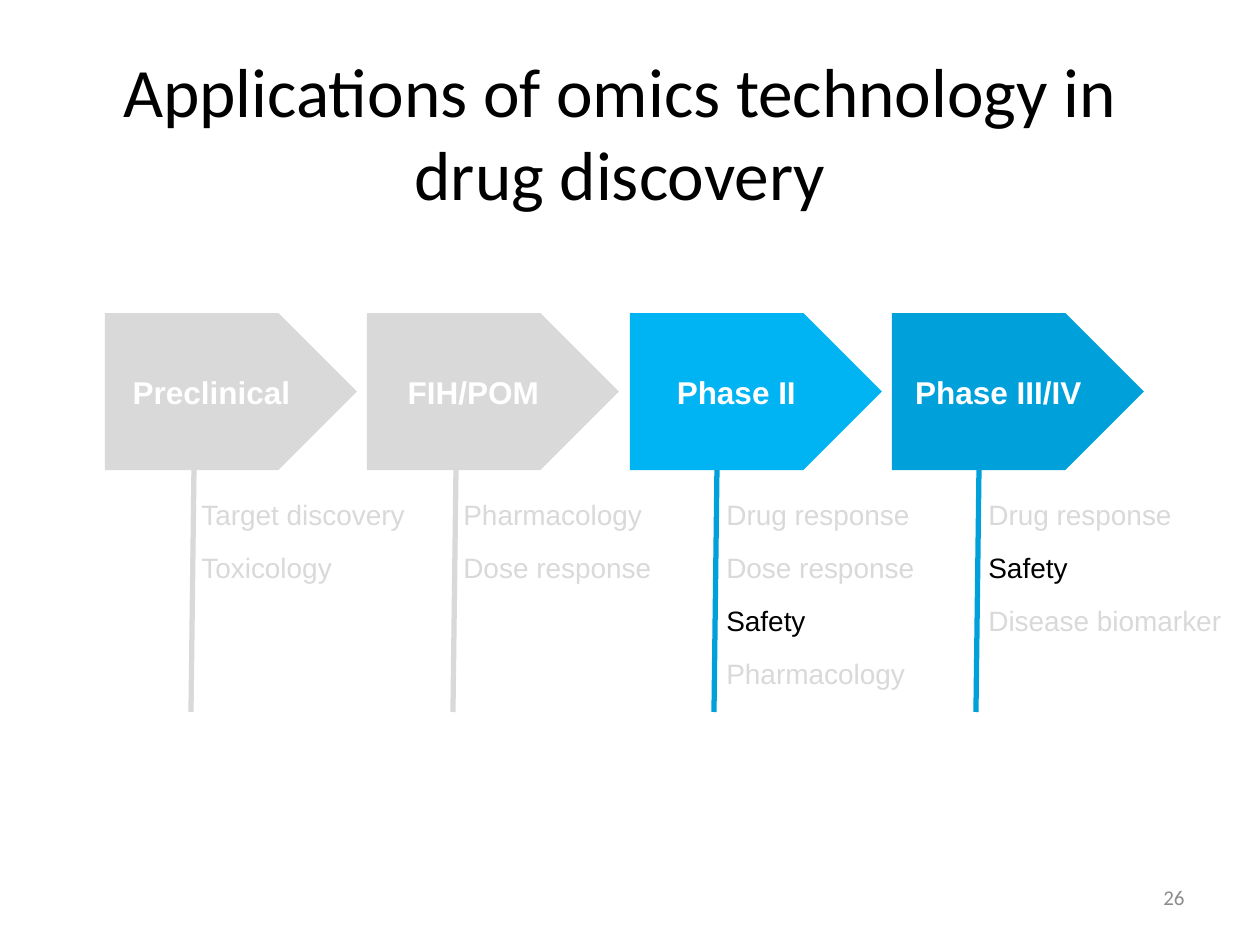
from pptx import Presentation
from pptx.dml.color import RGBColor
from pptx.enum.shapes import MSO_CONNECTOR, MSO_SHAPE
from pptx.enum.text import MSO_ANCHOR, MSO_AUTO_SIZE, PP_ALIGN
from pptx.oxml.ns import qn
from pptx.util import Pt
from lxml.etree import SubElement

BLACK = RGBColor(0x00, 0x00, 0x00)
WHITE = RGBColor(0xFF, 0xFF, 0xFF)
PALE = RGBColor(0xD9, 0xD9, 0xD9)
GREY = RGBColor(0x8C, 0x8C, 0x8C)
SKY = RGBColor(0x00, 0xB3, 0xF2)
BLUE = RGBColor(0x00, 0xA1, 0xDA)

WIDTHS = {
    "Target discovery": 232,
    "Toxicology": 157,
    "Pharmacology": 205,
    "Dose response": 215,
    "Drug response": 210,
    "Safety": 106,
    "Disease biomarker": 261,
}

PHASES = [
    ("Preclinical", PALE, PALE, 89, ["Target discovery", "Toxicology"]),
    ("FIH/POM", PALE, PALE, 89, ["Pharmacology", "Dose response"]),
    ("Phase II", SKY, BLUE, 87,
     ["Drug response", "Dose response", "Safety", "Pharmacology"]),
    ("Phase III/IV", BLUE, BLUE, 87,
     ["Drug response", "Safety", "Disease biomarker"]),
]


def px(*nums):
    return [round(num * 914400 / 126) for num in nums]


class Deck:
    face = "Arial"
    head = "Calibri"

    def __init__(self, wide, high):
        self.file = Presentation()
        self.file.slide_width, self.file.slide_height = px(wide, high)
        self.slide = self.file.slides.add_slide(self.file.slide_layouts[6])
        self.shapes = self.slide.shapes

    def style(self, frame, text, size, color, align, face, bold=False):
        line = frame.paragraphs[0]
        line.text = text
        line.alignment = align
        font = line.font
        font.name, font.size, font.bold = face, Pt(size), bold
        font.color.rgb = color

    def text(self, box, text, size, color, align):
        frame = self.shapes.add_textbox(*px(*box)).text_frame
        frame.word_wrap = True
        frame.vertical_anchor = MSO_ANCHOR.MIDDLE
        self.style(frame, text, size, color, align, self.head)

    def label(self, left, top, text, color):
        box = px(left, top, WIDTHS[text], 47)
        frame = self.shapes.add_textbox(*box).text_frame
        frame.word_wrap = False
        frame.auto_size = MSO_AUTO_SIZE.SHAPE_TO_FIT_TEXT
        self.style(frame, text, 16, color, PP_ALIGN.LEFT, self.face)

    def arrow(self, left, top, wide, high, text, color):
        box = px(left, top, wide, high)
        shape = self.shapes.add_shape(MSO_SHAPE.PENTAGON, *box)
        shape.shadow.inherit = False
        shape.fill.solid()
        shape.fill.fore_color.rgb = color
        shape.line.fill.background()
        frame = shape.text_frame
        frame.vertical_anchor = MSO_ANCHOR.MIDDLE
        self.style(frame, text, 18, WHITE, PP_ALIGN.CENTER, self.face, True)

    def stem(self, ends, color):
        line = self.shapes.add_connector(MSO_CONNECTOR.STRAIGHT, *px(*ends))
        line.line.color.rgb = color
        line.line.width = Pt(3)
        SubElement(line._element.spPr, qn("a:effectLst"))


def main():
    deck = Deck(1260, 945)
    deck.text((53, 53, 1134, 157),
              "Applications of omics technology in drug discovery",
              39.6, BLACK, PP_ALIGN.CENTER)
    deck.text((903, 872, 294, 50), "26", 12, GREY, PP_ALIGN.RIGHT)

    top, high, step, pitch = 313, 157, 53, 525
    base = top + high
    for col, (name, fill, ink, shift, items) in enumerate(PHASES):
        left = 105 + col * pitch // 2
        deck.arrow(left, top, 252, high, name, fill)
        deck.stem((left + shift, base, left + shift - 3, base + 242), ink)
        for row, item in enumerate(items):
            color = BLACK if item == "Safety" else PALE
            deck.label(left + 84, base + 21 + row * step, item, color)

    deck.file.save("out.pptx")


if __name__ == "__main__":
    main()
